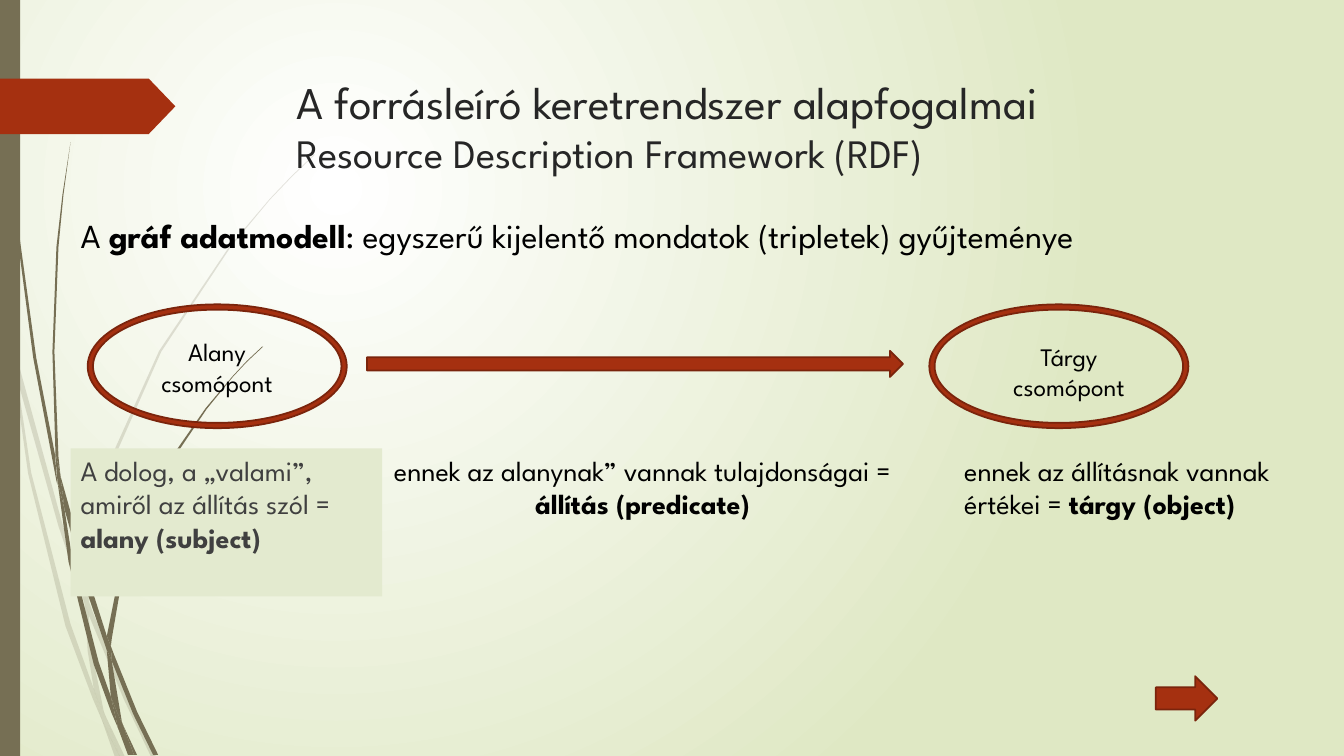
import pptx
import pptx.util
import pptx.dml.color
import pptx.enum.shapes
import pptx.enum.text
import pptx.oxml
import pptx.oxml.ns
from lxml import etree

Cm = pptx.util.Cm
Pt = pptx.util.Pt
RGBColor = pptx.dml.color.RGBColor
SHAPE = pptx.enum.shapes.MSO_SHAPE
ALIGN = pptx.enum.text.PP_ALIGN
qn = pptx.oxml.ns.qn

WHITE = RGBColor(0xFF, 0xFF, 0xFF)
BLACK = RGBColor(0, 0, 0)
PALE_GREEN = RGBColor(0xDF, 0xE8, 0xC4)
PANEL = RGBColor(0xE3, 0xEA, 0xCF)
OLIVE = RGBColor(0x76, 0x6F, 0x54)
RUST = RGBColor(0xA5, 0x30, 0x10)
DARK_RUST = RGBColor(0x7A, 0x24, 0x0C)
TITLE_GREY = RGBColor(0x26, 0x26, 0x26)
BODY_GREY = RGBColor(0x40, 0x40, 0x40)

PALE_WISPS = [
    [(11, 350), (9, 322), (0, 282), (0, 299), (10, 344)],
    [(58, 522), (84, 599), (85, 586), (62, 520), (14, 345), (17, 376)],
    [(92, 607), (88, 596), (88, 610), (123, 694), (150, 751), (155, 751), (127, 692)],
    [(119, 751), (124, 751), (105, 711)],
    [(93, 683), (70, 619), (31, 469), (17, 376), (11, 350), (28, 470), (65, 621),
     (92, 693), (101, 714), (99, 707)],
    [(84, 599), (87, 646), (93, 683), (96, 692), (105, 711), (103, 706), (91, 646),
     (88, 610), (88, 608)],
    [(88, 584), (110, 462), (160, 349), (229, 245), (268, 198), (290, 175), (312, 154),
     (312, 153), (289, 175), (268, 197), (228, 244), (158, 348), (107, 461), (85, 584),
     (85, 586), (88, 596)],
    [(101, 714), (114, 751), (119, 751)],
    [(88, 608), (88, 610), (88, 596), (85, 586), (84, 599)],
    [(96, 692), (93, 683), (99, 707), (101, 714), (119, 751), (105, 711)],
]
DARK_WISPS = [
    [(7, 110), (17, 233), (33, 355), (56, 477), (57, 481), (55, 457), (55, 453),
     (36, 355), (19, 232), (8, 109), (5, 48), (4, 0), (3, 0), (4, 48)],
    [(88, 592), (106, 645), (106, 633), (106, 631), (93, 590), (60, 472), (64, 505)],
    [(113, 649), (110, 641), (111, 656), (132, 708), (152, 749), (157, 749), (136, 706)],
    [(110, 691), (98, 657), (72, 556), (64, 505), (57, 477), (68, 557), (93, 659),
     (111, 708), (117, 722), (116, 717)],
    [(60, 472), (58, 453), (54, 349), (58, 245), (63, 193), (70, 141), (62, 193),
     (56, 245), (52, 349), (55, 449)],
    [(133, 749), (136, 749), (122, 719)],
    [(57, 477), (64, 505), (60, 472), (55, 449), (55, 453)],
    [(111, 633), (125, 552), (158, 476), (205, 406), (231, 374), (245, 359), (261, 344),
     (260, 344), (245, 358), (231, 373), (204, 405), (156, 474), (122, 551), (106, 631),
     (110, 641)],
    [(117, 722), (127, 749), (131, 749)],
    [(106, 645), (110, 691), (116, 706), (122, 719), (121, 716), (111, 656), (109, 651)],
    [(106, 645), (109, 651), (111, 656), (110, 641), (106, 631), (106, 633)],
    [(116, 706), (110, 691), (116, 717), (117, 722), (130, 749), (133, 749), (122, 719)],
]


class Deck:
    font = "League Spartan"

    def __init__(self):
        self.prs = pptx.Presentation()
        self.prs.slide_width, self.prs.slide_height = Cm(33.87), Cm(19.05)
        self.s = self.prs.slides.add_slide(self.prs.slide_layouts[5])

    def background(self, inner, outer):
        fill = self.s.background.fill
        fill.gradient()
        for stop, color, position in zip(fill.gradient_stops, (inner, outer), (0, 1)):
            stop.color.rgb = color
            stop.position = position
        grad = self.s.element.find(".//" + qn("a:gradFill"))
        lin = grad.find(qn("a:lin"))
        radial = etree.Element(qn("a:path"), {"path": "circle"})
        etree.SubElement(radial, qn("a:fillToRect"),
                         l="50000", t="50000", r="100000", b="100000")
        grad.replace(lin, radial)

    def wisps(self, outlines, opacity=None):
        group = self.s.shapes.add_group_shape()
        for start, *rest in outlines:
            builder = group.shapes.build_freeform(*start, scale=Cm(2.54) / 100)
            builder.add_line_segments(rest, close=True)
            sp = builder.convert_to_shape()
            self.paint(sp, OLIVE)
            if opacity:
                color = sp.element.spPr.find(".//" + qn("a:srgbClr"))
                etree.SubElement(color, qn("a:alpha"), val=str(opacity * 1000))

    def paint(self, sp, fill, line=None):
        sp.shadow.inherit = False
        sp.fill.solid()
        sp.fill.fore_color.rgb = fill
        if line is None:
            sp.line.fill.background()
        else:
            sp.line.color.rgb = line
            sp.line.width = Pt(1.25)

    def shape(self, kind, box, fill, line=None, adjustment=None):
        sp = self.s.shapes.add_shape(kind, *map(Cm, box))
        self.paint(sp, fill, line)
        if adjustment is not None:
            sp.adjustments[0] = adjustment
        return sp

    def style(self, r, size, color, bold=False):
        r.font.name = self.font
        r.font.size = Pt(size)
        r.font.bold = bold
        r.font.color.rgb = color

    def label(self, sp, parts, size, color=BLACK, align=ALIGN.LEFT):
        tf = sp.text_frame
        tf.word_wrap = True
        tf.vertical_anchor = pptx.enum.text.MSO_ANCHOR.TOP
        p = tf.paragraphs[0]
        p.alignment = align
        for i, part in enumerate(parts):
            r = p.add_run()
            r.text = part
            self.style(r, size, color, bold=i == 1)

    def text(self, box, parts, size, align=ALIGN.LEFT):
        self.label(self.s.shapes.add_textbox(*map(Cm, box)), parts, size, align=align)

    def title(self, box, lines, sizes):
        sp = self.s.shapes.title
        sp.element.getparent().append(sp.element)
        sp.left, sp.top, sp.width, sp.height = map(Cm, box)
        tf = sp.text_frame
        tf.text = "\v".join(lines)
        tf.word_wrap = True
        tf.auto_size = pptx.enum.text.MSO_AUTO_SIZE.NONE
        tf.vertical_anchor = pptx.enum.text.MSO_ANCHOR.TOP
        p = tf.paragraphs[0]
        p.alignment = ALIGN.LEFT
        for r, size in zip(p.runs, sizes):
            self.style(r, size, TITLE_GREY)


def main():
    deck = Deck()
    deck.background(WHITE, PALE_GREEN)
    deck.wisps(PALE_WISPS, opacity=20)
    deck.wisps(DARK_WISPS)
    deck.shape(SHAPE.RECTANGLE, (0, 0, 0.51, 19.05), OLIVE)
    deck.shape(SHAPE.PENTAGON, (0, 1.98, 4.42, 1.4), RUST, adjustment=0.48)

    deck.title((7.21, 1.73, 24.77, 3.56),
               ["A forrásleíró keretrendszer alapfogalmai",
                "Resource Description Framework (RDF)"], (32.4, 28.8))
    subject = deck.shape(SHAPE.RECTANGLE, (1.78, 11.3, 7.85, 3.73), PANEL)
    deck.label(subject, ["A dolog, a „valami”, amiről az állítás szól = ",
                         "alany (subject)"], 20, BODY_GREY)
    deck.text((1.78, 5.28, 31.01, 1.27),
              ["A ", "gráf adatmodell",
               ": egyszerű kijelentő mondatok (tripletek) gyűjteménye"], 24)

    for left in (2.21, 23.42):
        deck.shape(SHAPE.DONUT, (left, 7.67, 6.53, 3.12), RUST, DARK_RUST, 0.043)
    deck.shape(SHAPE.RIGHT_ARROW, (9.25, 8.84, 13.51, 0.66), RUST, DARK_RUST)

    deck.text((9.63, 11.3, 13.13, 1.96),
              ["ennek az alanynak” vannak tulajdonságai = ", "állítás (predicate)"],
              20, ALIGN.CENTER)
    deck.text((24.05, 11.3, 9.35, 3.68),
              ["ennek az állításnak vannak értékei = ", "tárgy (object)"], 20)
    for left, top, node in ((3.07, 8.36, "Alany csomópont"),
                            (24.54, 8.48, "Tárgy csomópont")):
        deck.text((left, top, 4.8, 1.8), [node], 18, ALIGN.CENTER)
    deck.shape(SHAPE.RIGHT_ARROW, (29.13, 17.04, 1.55, 1.12), RUST, DARK_RUST)
    deck.prs.save("out.pptx")


if __name__ == "__main__":
    main()
